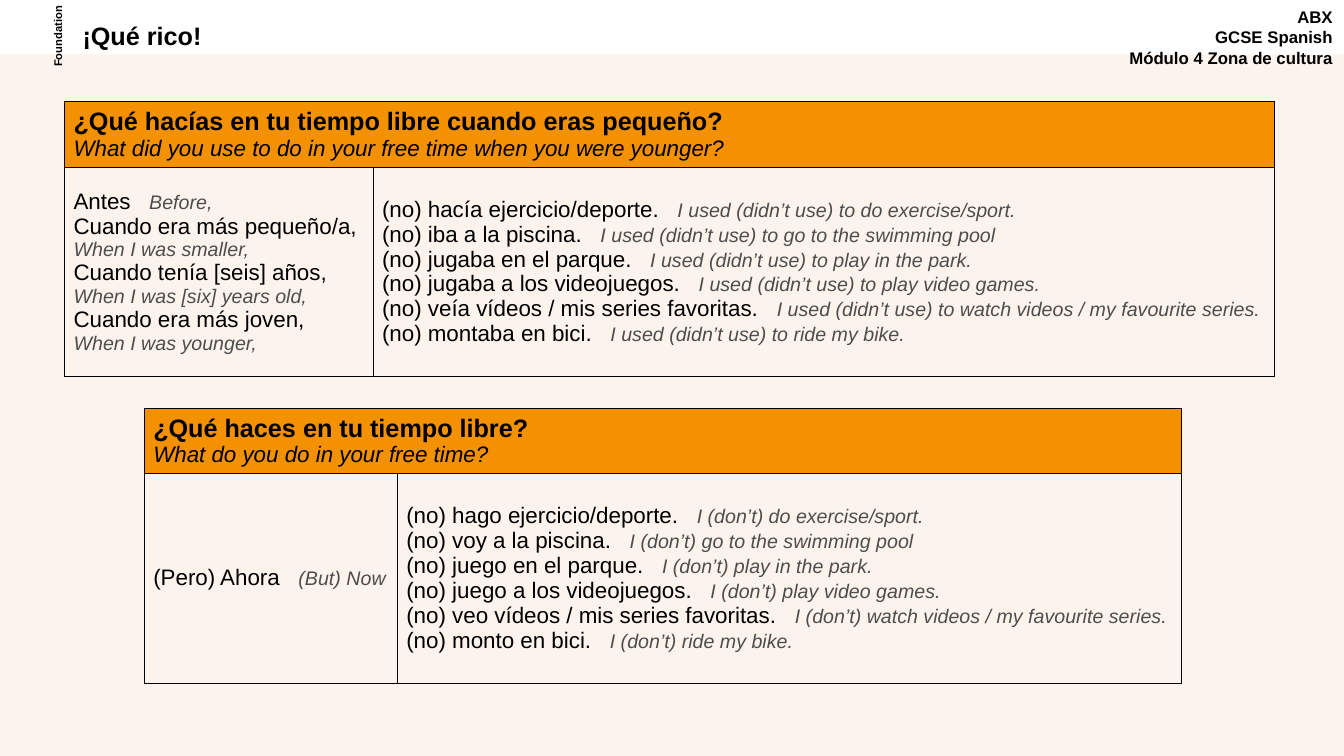
import pptx
import pptx.dml.color
import pptx.enum.shapes
import pptx.enum.text
import pptx.oxml
import pptx.oxml.ns
import pptx.util

ALIGN = pptx.enum.text.PP_ALIGN
BLACK, GREY, ORANGE, CREAM = "000000", "4D4D4C", "F39100", "FDF3ED"
FONT = "Arial"
SLIDE_WIDTH, SLIDE_HEIGHT = pptx.util.Inches(13.333), pptx.util.Inches(7.5)

# Places are percentages of the slide: left, top, width, height
BAND_PLACE = (0, 7.2, 100, 92.8)
LABELS = [
    {"lines": ["ABX", "GCSE Spanish", "Módulo 4 Zona de cultura"],
     "place": (77.48, 0.27, 22.42, 10.27), "size": 12, "align": ALIGN.RIGHT},
    {"lines": ["¡Qué rico!"], "place": (5.4, 2.53, 51.6, 5.73),
     "size": 18, "align": ALIGN.LEFT, "line_spacing": 0.9},
    {"lines": ["Foundation"], "place": (1.13, 3.07, 6.52, 3.47),
     "size": 8, "align": ALIGN.CENTER, "rotation": 270},
]

# Each phrase is a pair: Spanish, English
ROW_HEIGHTS = (8, 27.73)
TABLES = [
    {"corner": (4.8, 13.47), "columns": (22.95, 67.05),
     "heading": ("¿Qué hacías en tu tiempo libre cuando eras pequeño?",
                 "What did you use to do in your free time when you were younger?"),
     "when": [
         ("Antes", "Before,"),
         ("Cuando era más pequeño/a,", ""),
         ("", "When I was smaller,"),
         ("Cuando tenía [seis] años,", ""),
         ("", "When I was [six] years old,"),
         ("Cuando era más joven,", ""),
         ("", "When I was younger,")],
     "activities": [
         ("(no) hacía ejercicio/deporte.", "I used (didn’t use) to do exercise/sport."),
         ("(no) iba a la piscina.", "I used (didn’t use) to go to the swimming pool"),
         ("(no) jugaba en el parque.", "I used (didn’t use) to play in the park."),
         ("(no) jugaba a los videojuegos.", "I used (didn’t use) to play video games."),
         ("(no) veía vídeos / mis series favoritas.",
          "I used (didn’t use) to watch videos / my favourite series."),
         ("(no) montaba en bici.", "I used (didn’t use) to ride my bike.")]},
    {"corner": (10.73, 54), "columns": (18.83, 58.35),
     "heading": ("¿Qué haces en tu tiempo libre?", "What do you do in your free time?"),
     "when": [("(Pero) Ahora", "(But) Now")],
     "activities": [
         ("(no) hago ejercicio/deporte.", "I (don’t) do exercise/sport."),
         ("(no) voy a la piscina.", "I (don’t) go to the swimming pool"),
         ("(no) juego en el parque.", "I (don’t) play in the park."),
         ("(no) juego a los videojuegos.", "I (don’t) play video games."),
         ("(no) veo vídeos / mis series favoritas.",
          "I (don’t) watch videos / my favourite series."),
         ("(no) monto en bici.", "I (don’t) ride my bike.")]},
]


def across(percent):
    return round(SLIDE_WIDTH * percent / 100)


def down(percent):
    return round(SLIDE_HEIGHT * percent / 100)


def place_on_slide(left, top, width, height):
    return across(left), down(top), across(width), down(height)


def rgb(color):
    return pptx.dml.color.RGBColor.from_string(color)


def add_text(para, text, size=16, color=BLACK, bold=False, italic=False, tracking=0):
    """Add one run; tracking is extra letter spacing in hundredths of a point."""
    span = para.add_run()
    span.text = text
    font = span.font
    font.name, font.size, font.bold, font.italic = FONT, pptx.util.Pt(size), bold, italic
    font.color.rgb = rgb(color)
    if tracking:
        span._r.get_or_add_rPr().set("spc", str(tracking))


def paragraphs(frame, items):
    """Yield each item with its own paragraph, using the frame's first one too."""
    for index, item in enumerate(items):
        yield (frame.add_paragraph() if index else frame.paragraphs[0]), item


def add_label(slide, lines, place, size, align, line_spacing=None, rotation=0):
    box = slide.shapes.add_textbox(*place_on_slide(*place))
    box.rotation = rotation
    frame = box.text_frame
    frame.word_wrap = True
    for para, line in paragraphs(frame, lines):
        para.alignment, para.line_spacing = align, line_spacing
        add_text(para, line, size=size, bold=True)


def style_cell(cell, fill=None):
    cell.vertical_anchor = pptx.enum.text.MSO_ANCHOR.MIDDLE
    cell.margin_left = cell.margin_right = pptx.util.Inches(0.09)
    cell.margin_top = cell.margin_bottom = pptx.util.Inches(0.04)
    properties = cell._tc.get_or_add_tcPr()
    for side in ("lnL", "lnR", "lnT", "lnB"):
        properties.append(pptx.oxml.parse_xml(
            f'<a:{side} {pptx.oxml.ns.nsdecls("a")} w="{pptx.util.Pt(0.75)}">'
            f'<a:solidFill><a:srgbClr val="{BLACK}"/></a:solidFill></a:{side}>'))
    if fill:
        cell.fill.solid()
        cell.fill.fore_color.rgb = rgb(fill)
    else:
        cell.fill.background()


def write_phrases(cell, phrases, hanging=0):
    for para, (spanish, english) in paragraphs(cell.text_frame, phrases):
        if hanging:
            indent = pptx.util.Inches(hanging)
            properties = para._p.get_or_add_pPr()
            properties.set("marL", str(indent))
            properties.set("indent", str(-indent))
        if spanish:
            add_text(para, spanish)
        if spanish and english:
            add_text(para, " ", tracking=880)
        if english:
            add_text(para, english, size=14, color=GREY, italic=True)


def add_phrase_table(slide, corner, columns, heading, when, activities):
    place = place_on_slide(*corner, sum(columns), sum(ROW_HEIGHTS))
    table = slide.shapes.add_table(len(ROW_HEIGHTS), len(columns), *place).table
    table.first_row = table.horz_banding = False
    for column, width in zip(table.columns, columns):
        column.width = across(width)
    for row, height, fill in zip(table.rows, ROW_HEIGHTS, (ORANGE, None)):
        row.height = down(height)
        for cell in row.cells:
            style_cell(cell, fill)

    top = table.cell(0, 0)
    top.merge(table.cell(0, 1))
    question, translation = heading
    add_text(top.text_frame.paragraphs[0], question, size=18, bold=True)
    add_text(top.text_frame.add_paragraph(), translation, italic=True)
    write_phrases(table.cell(1, 0), when, hanging=0.12)
    write_phrases(table.cell(1, 1), activities)


def main():
    deck = pptx.Presentation()
    deck.slide_width, deck.slide_height = SLIDE_WIDTH, SLIDE_HEIGHT
    slide = deck.slides.add_slide(deck.slide_layouts[6])

    band = slide.shapes.add_shape(
        pptx.enum.shapes.MSO_SHAPE.RECTANGLE, *place_on_slide(*BAND_PLACE))
    band.shadow.inherit = False
    band.fill.solid()
    band.fill.fore_color.rgb = rgb(CREAM)
    band.line.fill.background()

    for label in LABELS:
        add_label(slide, **label)
    for content in TABLES:
        add_phrase_table(slide, **content)
    deck.save("out.pptx")


if __name__ == "__main__":
    main()
